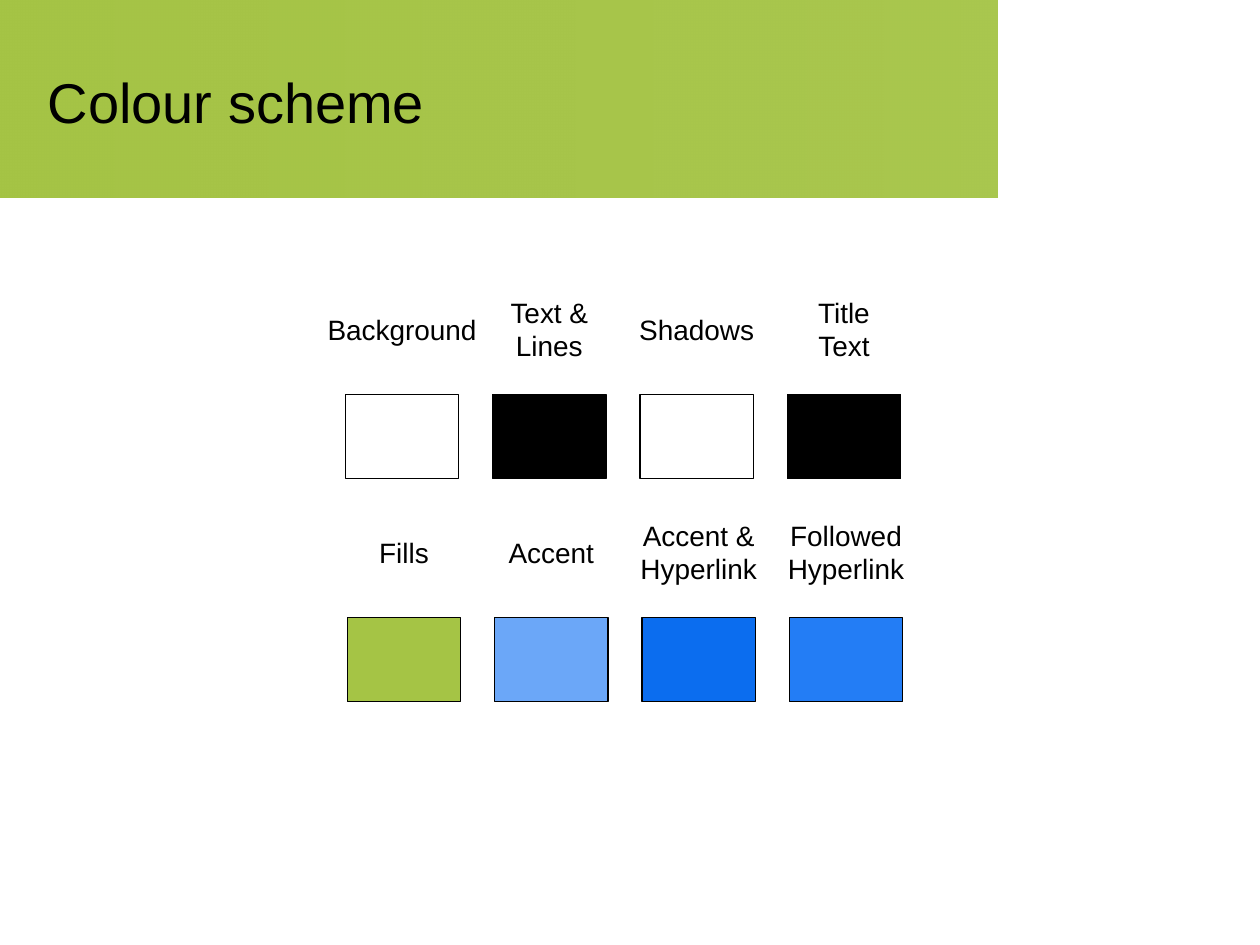
import dataclasses
import typing

import lxml.etree
import pptx
import pptx.dml.color
import pptx.enum.shapes
import pptx.enum.text
import pptx.oxml.ns
import pptx.util

Cm = pptx.util.Cm
Pt = pptx.util.Pt
qn = pptx.oxml.ns.qn
ALIGN = pptx.enum.text.PP_ALIGN
ANCHOR = pptx.enum.text.MSO_ANCHOR
AUTO = pptx.enum.text.MSO_AUTO_SIZE

COLOURS = {
    "white": "FFFFFF",
    "black": "000000",
    "green": "A5C445",
    "light_blue": "6BA7F8",
    "blue": "0B6DEF",
    "mid_blue": "237DF5",
}
FONT = "Arial"
SWATCH_W, SWATCH_H, PITCH = 2.29, 1.7, 2.97
LABEL_RISE = 1.31
LABEL_HEIGHTS = {1: 0.94, 2: 1.63}


@dataclasses.dataclass
class Swatch:
    label: str
    colour: str
    label_width: float


@dataclasses.dataclass
class Row:
    left: float
    top: float
    swatches: typing.List[Swatch]


ROWS = [
    Row(6.96, 7.95, [
        Swatch("Background", "white", 3.53),
        Swatch("Text &\nLines", "black", 2.13),
        Swatch("Shadows", "white", 2.82),
        Swatch("Title\vText", "black", 1.6),
    ]),
    Row(7, 12.45, [
        Swatch("Fills", "green", 1.5),
        Swatch("Accent", "light_blue", 2.24),
        Swatch("Accent &\nHyperlink", "blue", 2.95),
        Swatch("Followed\nHyperlink", "mid_blue", 2.95),
    ]),
]


def rgb(name: str) -> pptx.dml.color.RGBColor:
    """Return the named colour."""
    return pptx.dml.color.RGBColor.from_string(COLOURS[name])


def add_rect(s, left: float, top: float, width: float, height: float):
    """Add a rectangle without shadow, measured in centimetres."""
    sp = s.shapes.add_shape(
        pptx.enum.shapes.MSO_SHAPE.RECTANGLE, Cm(left), Cm(top), Cm(width), Cm(height))
    sp.shadow.inherit = False
    return sp


def add_text(s, text: str, left: float, top: float, width: float, height: float, *,
             size: int = 16, align=ALIGN.CENTER, anchor=ANCHOR.TOP,
             wrap: bool = False, auto_size=AUTO.SHAPE_TO_FIT_TEXT) -> None:
    """Add a formatted text box, measured in centimetres."""
    tf = s.shapes.add_textbox(Cm(left), Cm(top), Cm(width), Cm(height)).text_frame
    tf.text = text
    tf.word_wrap = wrap
    tf.auto_size = auto_size
    tf.vertical_anchor = anchor
    for p in tf.paragraphs:
        p.alignment = align
        for r in p.runs:
            r.font.name = FONT
            r.font.size = Pt(size)
            r.font.color.rgb = rgb("black")


def add_banner(s) -> None:
    """Add the title banner, which fades slightly to the right."""
    sp = add_rect(s, 0, 0, 20.1, 3.99)
    sp.line.fill.background()
    sp.fill.gradient()
    sp.fill.gradient_angle = 0
    for stop in sp.fill.gradient_stops:
        stop.color.rgb = rgb("green")
    end = list(sp._element.spPr.iter(qn("a:srgbClr")))[-1]
    lxml.etree.SubElement(end, qn("a:alpha")).set("val", "95000")


def add_row(s, row: Row) -> None:
    """Add a row of swatches with centred labels above them."""
    for i, swatch in enumerate(row.swatches):
        left = row.left + i * PITCH
        sp = add_rect(s, left, row.top, SWATCH_W, SWATCH_H)
        sp.fill.solid()
        sp.fill.fore_color.rgb = rgb(swatch.colour)
        sp.line.color.rgb = rgb("black")
        sp.line.width = Pt(0.75)
        height = LABEL_HEIGHTS[len(swatch.label.splitlines())]
        add_text(s, swatch.label, left + (SWATCH_W - swatch.label_width) / 2,
                 row.top - LABEL_RISE - height / 2, swatch.label_width, height)


def main() -> None:
    """Build the colour scheme slide."""
    prs = pptx.Presentation()
    prs.slide_width, prs.slide_height = Cm(25.4), Cm(19.05)
    s = prs.slides.add_slide(prs.slide_layouts[6])
    add_banner(s)
    add_text(s, "Colour scheme", 0.71, 0.76, 19, 2.57, size=32, align=ALIGN.LEFT,
             anchor=ANCHOR.MIDDLE, wrap=True, auto_size=AUTO.NONE)
    for row in ROWS:
        add_row(s, row)
    prs.save("out.pptx")


if __name__ == "__main__":
    main()
